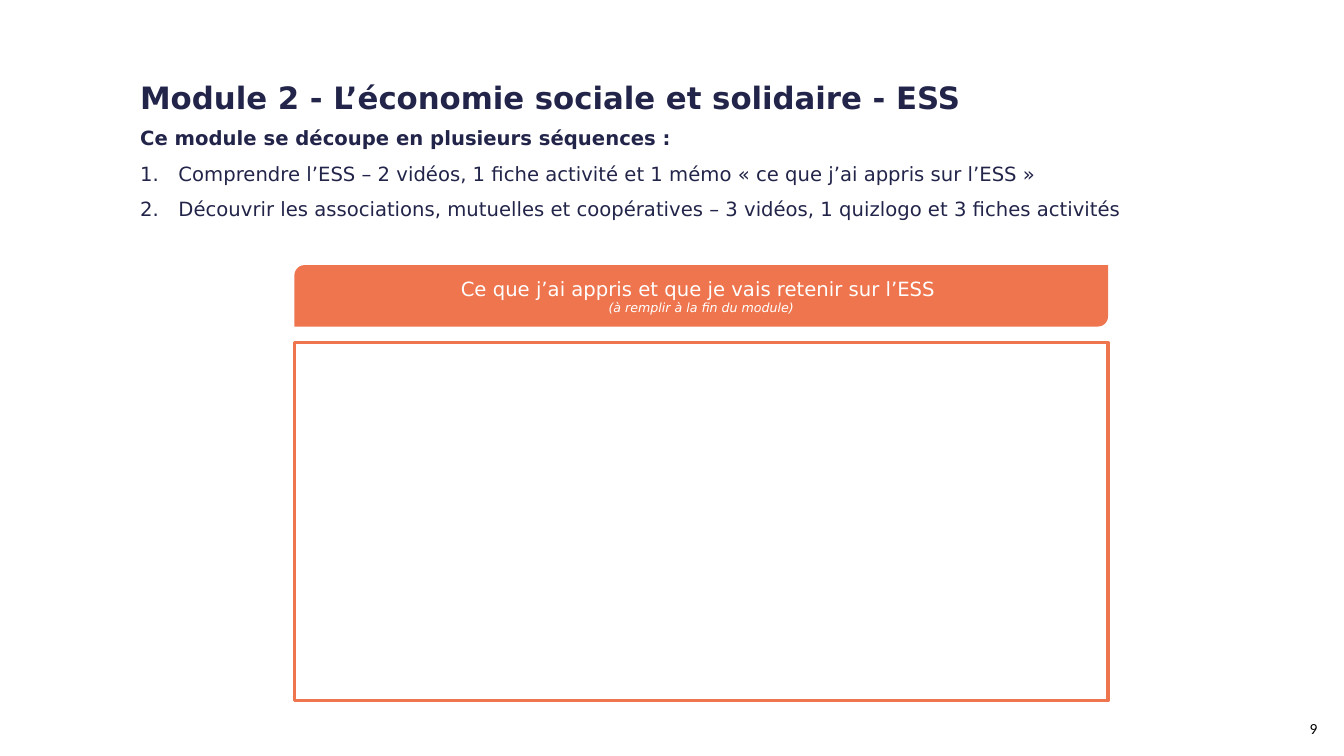
from lxml import etree
from pptx import Presentation
from pptx import util as u
from pptx.dml.color import RGBColor
from pptx.enum import shapes, text
from pptx.oxml import ns

COLORS = {"navy": "222449", "orange": "EE754D", "white": "FFFFFF", "black": "000000"}
TITLE = dict(size=u.Pt(22), name="DejaVu Sans", bold=True, italic=False)
LEAD = dict(TITLE, size=u.Pt(14))
BODY = dict(LEAD, bold=False)
NOTE = dict(BODY, size=u.Pt(9), italic=True)
PAGE = dict(BODY, size=u.Pt(11), name="Calibri")


def place(shape, left, top, width, height):
    shape.left, shape.top = u.Inches(left), u.Inches(top)
    shape.width, shape.height = u.Inches(width), u.Inches(height)


def write(shape, lines, color, anchor=text.MSO_ANCHOR.TOP, **paragraph_format):
    """Fill a shape with (wording, font format) lines and return its paragraphs."""
    frame = shape.text_frame
    frame.word_wrap = True
    frame.auto_size = text.MSO_AUTO_SIZE.NONE
    frame.vertical_anchor = anchor
    for index, (wording, font_format) in enumerate(lines):
        paragraph = frame.add_paragraph() if index else frame.paragraphs[0]
        for key, value in paragraph_format.items():
            setattr(paragraph, key, value)
        if not index:
            paragraph.space_before = u.Pt(0)
        run = paragraph.add_run()
        run.text = wording
        for key, value in font_format.items():
            setattr(run.font, key, value)
        run.font.color.rgb = RGBColor.from_string(COLORS[color])
    return frame.paragraphs


presentation = Presentation()
presentation.slide_width, presentation.slide_height = u.Inches(13.33), u.Inches(7.5)
slide = presentation.slides.add_slide(presentation.slide_layouts[1])

# Title and numbered sequences
title, sequences = slide.placeholders
left_aligned = dict(alignment=text.PP_ALIGN.LEFT, line_spacing=0.9, space_before=u.Pt(10))
place(title, 1.29, 0.77, 9.18, 0.77)
write(title, [("Module 2 - L’économie sociale et solidaire - ESS", TITLE)], "navy", **left_aligned)

place(sequences, 1.29, 1.23, 11.68, 1.16)
paragraphs = write(sequences, [
    ("Ce module se découpe en plusieurs séquences :", LEAD),
    ("Comprendre l’ESS – 2 vidéos, 1 fiche activité et 1 mémo « ce que j’ai appris sur l’ESS »", BODY),
    ("Découvrir les associations, mutuelles et coopératives – 3 vidéos, 1 quizlogo et 3 fiches activités", BODY),
], "navy", **left_aligned)
for index, paragraph in enumerate(paragraphs):
    properties = paragraph._p.get_or_add_pPr()
    indent = u.Inches(0.38) if index else 0
    properties.set("marL", str(indent))
    properties.set("indent", str(-indent))
    if index:
        etree.SubElement(properties, ns.qn("a:buFont"), typeface="+mj-lt")
        etree.SubElement(properties, ns.qn("a:buAutoNum"), type="arabicPeriod")
    else:
        etree.SubElement(properties, ns.qn("a:buNone"))

# Banner and empty answer frame
kinds = shapes.MSO_SHAPE
banner, answer = [
    slide.shapes.add_shape(kind, u.Inches(2.92), u.Inches(top), u.Inches(8.07), u.Inches(height))
    for kind, top, height in [(kinds.ROUND_2_DIAG_RECTANGLE, 2.63, 0.61), (kinds.RECTANGLE, 3.4, 3.55)]
]
for shape, fill in [(banner, "orange"), (answer, "white")]:
    shape.shadow.inherit = False
    shape.fill.solid()
    shape.fill.fore_color.rgb = RGBColor.from_string(COLORS[fill])
banner.line.fill.background()
answer.line.color.rgb = RGBColor.from_string(COLORS["orange"])
answer.line.width = u.Pt(2.25)
write(banner, [
    ("Ce que j’ai appris et que je vais retenir sur l’ESS ", BODY),
    ("(à remplir à la fin du module)", NOTE),
], "white", text.MSO_ANCHOR.MIDDLE, alignment=text.PP_ALIGN.CENTER)

# Page number
page_number = slide.shapes.add_textbox(u.Inches(12.89), u.Inches(7.08), u.Inches(0.39), u.Inches(0.29))
write(page_number, [("9", PAGE)], "black")

presentation.save("out.pptx")
